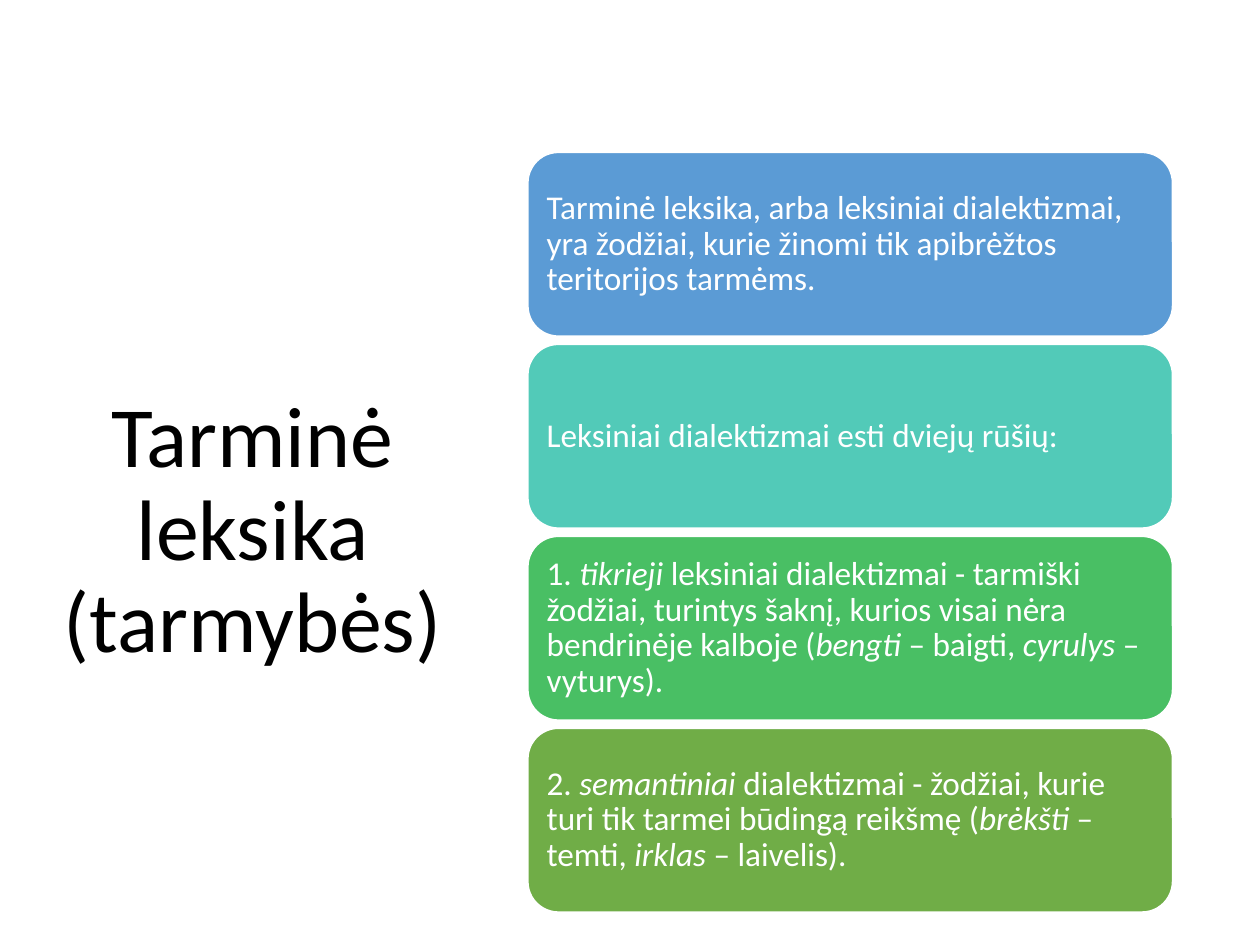
from dataclasses import dataclass

from pptx import Presentation
from pptx.dml.color import RGBColor
from pptx.enum.shapes import MSO_SHAPE
from pptx.enum.text import MSO_ANCHOR, MSO_AUTO_SIZE, PP_ALIGN
from pptx.util import Cm, Pt

ROUNDED = MSO_SHAPE.ROUNDED_RECTANGLE
MIDDLE = MSO_ANCHOR.MIDDLE
NO_AUTOFIT = MSO_AUTO_SIZE.NONE
LEFT, CENTER = PP_ALIGN.LEFT, PP_ALIGN.CENTER
TITLE_ONLY = 5


@dataclass(frozen=True)
class Theme:
    font: str = "Calibri"
    title_size: int = 49
    card_size: int = 19
    title_color: str = "000000"
    card_text: str = "FFFFFF"
    card_line: str = "FFFFFF"
    card_fills: tuple = ("5B9BD5", "52CAB8", "49BF64", "70AD47")


THEME = Theme()
TITLE = "Tarminė leksika (tarmybės)"

# Each card lists its runs: regular and italic text in turn.
CARDS = (
    ("Tarminė leksika, arba leksiniai dialektizmai, yra žodžiai, "
     "kurie žinomi tik apibrėžtos teritorijos tarmėms.",),
    ("Leksiniai dialektizmai esti dviejų rūšių:",),
    ("1. ", "tikrieji ",
     "leksiniai dialektizmai - tarmiški žodžiai, turintys šaknį, "
     "kurios visai nėra bendrinėje kalboje (",
     "bengti", " – baigti, ", "cyrulys", " – vyturys)."),
    ("2. ", "semantiniai ",
     "dialektizmai - žodžiai, kurie turi tik tarmei būdingą reikšmę (",
     "brėkšti", " – temti, ", "irklas", " – laivelis)."),
)

CARD_LEFT, CARD_TOP = Cm(10.64), Cm(3.07)
CARD_WIDTH, CARD_HEIGHT = Cm(13), Cm(3.71)
CARD_PITCH = Cm(3.87)
CARD_INSET = Cm(0.2)


def set_attrs(obj, values):
    for name, value in values.items():
        setattr(obj, name, value)


def write_runs(tf, runs, size, color, align):
    """Fill the first paragraph, with every second run in italics."""
    set_attrs(tf, {"word_wrap": True, "auto_size": NO_AUTOFIT,
                   "vertical_anchor": MIDDLE})
    p = tf.paragraphs[0]
    set_attrs(p, {"alignment": align, "line_spacing": 0.9})
    for i, text in enumerate(runs):
        r = p.add_run()
        r.text = text
        set_attrs(r.font, {"name": THEME.font, "size": Pt(size),
                           "italic": i % 2 == 1})
        r.font.color.rgb = RGBColor.from_string(color)


def add_title(s):
    sp = s.shapes.title
    set_attrs(sp, {"left": Cm(0.99), "top": Cm(2.97),
                   "width": Cm(8.2), "height": Cm(15.52)})
    write_runs(sp.text_frame, (TITLE,), THEME.title_size,
               THEME.title_color, CENTER)


def add_card(s, top, runs, fill):
    sp = s.shapes.add_shape(ROUNDED, CARD_LEFT, top, CARD_WIDTH, CARD_HEIGHT)
    sp.shadow.inherit = False
    sp.fill.solid()
    sp.fill.fore_color.rgb = RGBColor.from_string(fill)
    sp.line.color.rgb = RGBColor.from_string(THEME.card_line)
    sp.line.width = Pt(1)
    tf = sp.text_frame
    set_attrs(tf, {f"margin_{side}": CARD_INSET
                   for side in ("left", "top", "right", "bottom")})
    write_runs(tf, runs, THEME.card_size, THEME.card_text, LEFT)


def main():
    prs = Presentation()
    set_attrs(prs, {"slide_width": Cm(25.4), "slide_height": Cm(19.05)})
    s = prs.slides.add_slide(prs.slide_layouts[TITLE_ONLY])
    add_title(s)
    for i, (runs, fill) in enumerate(zip(CARDS, THEME.card_fills)):
        add_card(s, CARD_TOP + i * CARD_PITCH, runs, fill)
    prs.save("out.pptx")


if __name__ == "__main__":
    main()
